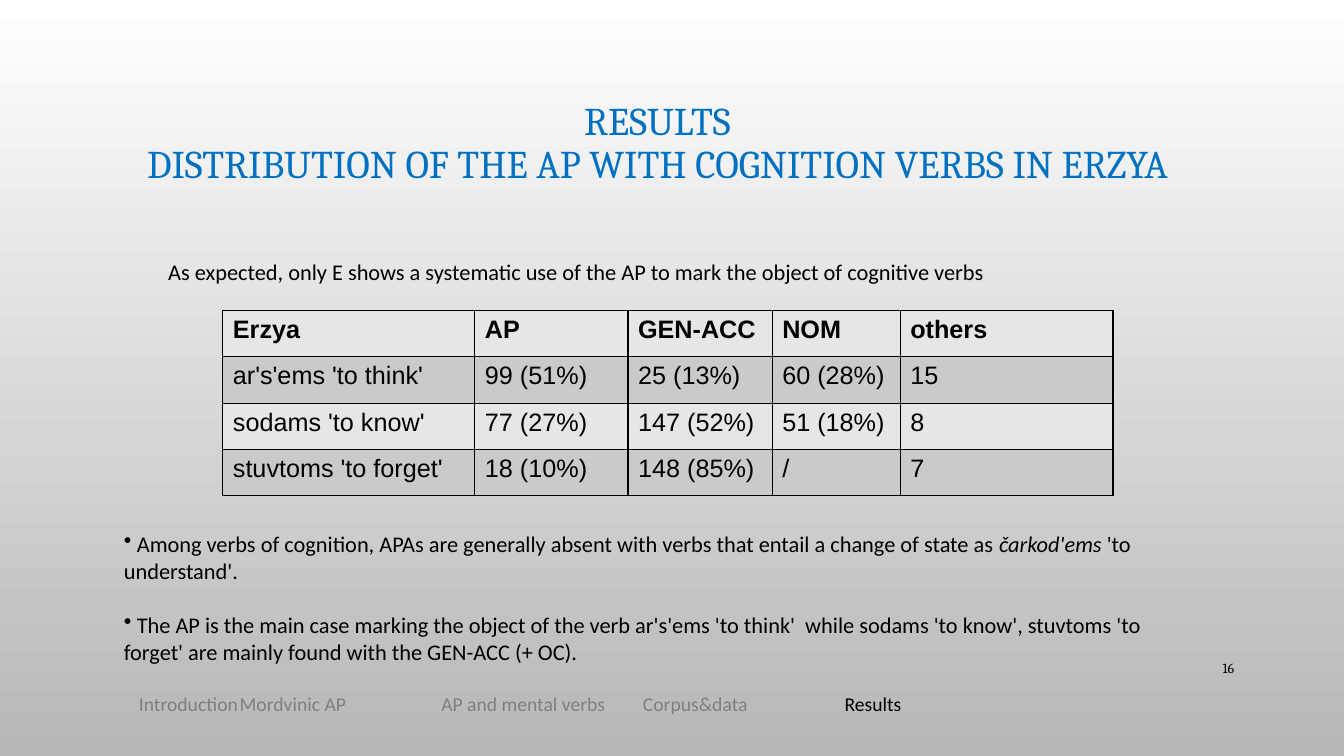
from dataclasses import dataclass

from lxml.etree import SubElement
from pptx import Presentation
from pptx.dml.color import RGBColor as RGB
from pptx.enum.text import MSO_ANCHOR as ANCHOR, PP_ALIGN as ALIGN
from pptx.oxml.ns import qn
from pptx.util import Inches, Pt

W, H = Inches(13.33), Inches(7.5)


@dataclass(frozen=True)
class Style:
    font: str
    size: int
    color: str
    bold: bool = False
    italic: bool = False


class Theme:
    ink, back_top, back_bottom = "000000", "FFFFFF", "B7B7B7"
    row_fills = ("E6E6E6", "CACACA")
    title = Style("Cambria", 28, "0070C0")
    number = Style("Cambria", 10, ink)
    body = Style("Calibri", 16, ink)
    term = Style("Calibri", 16, ink, italic=True)
    nav = Style("Calibri", 14, "7F7F7F")
    nav_current = Style("Calibri", 14, ink)
    head = Style("Arial", 18, ink, bold=True)
    cell = Style("Arial", 18, ink)


TITLE = "RESULTS\vDISTRIBUTION OF THE AP WITH COGNITION VERBS IN ERZYA"
LEAD = ("As expected, only E shows a systematic use of the AP "
        "to mark the object of cognitive verbs")
NOTES = [
    [(" Among verbs of cognition, APAs are generally absent with verbs "
      "that entail a change of state as ", Theme.body),
     ("čarkod'ems", Theme.term),
     (" 'to understand'.", Theme.body)],
    [(" The AP is the main case marking the object of the verb ar's'ems "
      "'to think'  while sodams 'to know', stuvtoms 'to forget' are mainly "
      "found with the GEN-ACC (+ OC).", Theme.body)],
]
SECTIONS = ["Introduction", "Mordvinic AP", "AP and mental verbs", "Corpus&data"]
CURRENT = "Results"
TABLE = [
    ["Erzya", "AP", "GEN-ACC", "NOM", "others"],
    ["ar's'ems 'to think'", "99 (51%)", "25 (13%)", "60 (28%)", "15"],
    ["sodams 'to know'", "77 (27%)", "147 (52%)", "51 (18%)", "8"],
    ["stuvtoms 'to forget'", "18 (10%)", "148 (85%)", "/", "7"],
]
COLUMN_WIDTHS = [18.75, 11.4, 10.73, 9.53, 15.83]
ROW_HEIGHT = 6.13


def across(share):
    """Percent of the slide's width."""
    return int(W * share / 100)


def down(share):
    """Percent of the slide's height."""
    return int(H * share / 100)


def format_run(r, style):
    f = r.font
    f.name, f.size = style.font, Pt(style.size)
    f.bold, f.italic = style.bold, style.italic
    f.color.rgb = RGB.from_string(style.color)


def add_bullet(p):
    pPr = p._p.get_or_add_pPr()
    pPr.set("marL", "0")
    pPr.set("indent", str(Inches(-0.11)))
    color = SubElement(pPr, qn("a:buClr"))
    SubElement(color, qn("a:srgbClr"), val=Theme.ink)
    SubElement(pPr, qn("a:buChar"), char="•")


def add_tabs(p, stops):
    tabs = SubElement(p._p.get_or_add_pPr(), qn("a:tabLst"))
    for stop in stops:
        SubElement(tabs, qn("a:tab"), pos=str(across(stop)), algn="l")


def add_text(slide, box, paragraphs, align=ALIGN.LEFT, anchor=ANCHOR.TOP):
    """Each paragraph is a list of (text, style); box is in percent."""
    x, y, w, h = box
    tf = slide.shapes.add_textbox(across(x), down(y), across(w), down(h)).text_frame
    tf.word_wrap, tf.vertical_anchor = True, anchor
    for i, parts in enumerate(paragraphs):
        p = tf.add_paragraph() if i else tf.paragraphs[0]
        p.alignment = align
        for text, style in parts:
            for n, line in enumerate(text.split("\v")):
                if n:
                    p.add_line_break()
                r = p.add_run()
                r.text = line
                format_run(r, style)
    return tf


def add_borders(cell):
    tcPr = cell._tc.get_or_add_tcPr()
    for side in ("lnL", "lnR", "lnT", "lnB"):
        ln = SubElement(tcPr, qn(f"a:{side}"), w=str(Pt(1)))
        fill = SubElement(ln, qn("a:solidFill"))
        SubElement(fill, qn("a:srgbClr"), val=Theme.ink)


def add_results_table(slide, x, y):
    table = slide.shapes.add_table(
        len(TABLE), len(COLUMN_WIDTHS), across(x), down(y),
        across(sum(COLUMN_WIDTHS)), down(ROW_HEIGHT * len(TABLE))).table
    table.horz_banding = False
    for column, width in zip(table.columns, COLUMN_WIDTHS):
        column.width = across(width)
    for i, values in enumerate(TABLE):
        table.rows[i].height = down(ROW_HEIGHT)
        for j, value in enumerate(values):
            cell = table.cell(i, j)
            add_borders(cell)
            cell.fill.solid()
            cell.fill.fore_color.rgb = RGB.from_string(Theme.row_fills[i % 2])
            cell.text_frame.text = value
            r = cell.text_frame.paragraphs[0].runs[0]
            format_run(r, Theme.cell if i else Theme.head)


def set_background(slide):
    fill = slide.background.fill
    fill.gradient()
    fill.gradient_angle = 270
    for stop, color in zip(fill.gradient_stops, (Theme.back_top, Theme.back_bottom)):
        stop.color.rgb = RGB.from_string(color)


def main():
    prs = Presentation()
    prs.slide_width, prs.slide_height = W, H
    slide = prs.slides.add_slide(prs.slide_layouts[6])
    set_background(slide)

    # Title and slide number
    tf = add_text(slide, (5.33, 9.07, 87.17, 20), [[(TITLE, Theme.title)]],
                  ALIGN.CENTER, ANCHOR.MIDDLE)
    tf.paragraphs[0].line_spacing = 0.9
    add_text(slide, (86.27, 85.73, 6.3, 5.33), [[("16", Theme.number)]],
             ALIGN.RIGHT, ANCHOR.MIDDLE)

    # Lead sentence and table
    add_text(slide, (11.78, 33.47, 69.84, 4.93), [[(LEAD, Theme.body)]])
    add_results_table(slide, 16.58, 41.07)

    # Bulleted notes
    tf = add_text(slide, (8.48, 69.47, 78.69, 23.33), NOTES)
    for p in tf.paragraphs:
        add_bullet(p)
    tf.paragraphs[1].space_before = Pt(19.5)

    # Section navigation
    sections = "".join(f"{name}\t" for name in SECTIONS)
    tf = add_text(slide, (9.6, 90.93, 75.02, 4.53),
                  [[(sections, Theme.nav), (CURRENT, Theme.nav_current)]])
    add_tabs(tf.paragraphs[0], [7.5 + 15 * i for i in range(len(SECTIONS))])

    prs.save("out.pptx")


if __name__ == "__main__":
    main()
